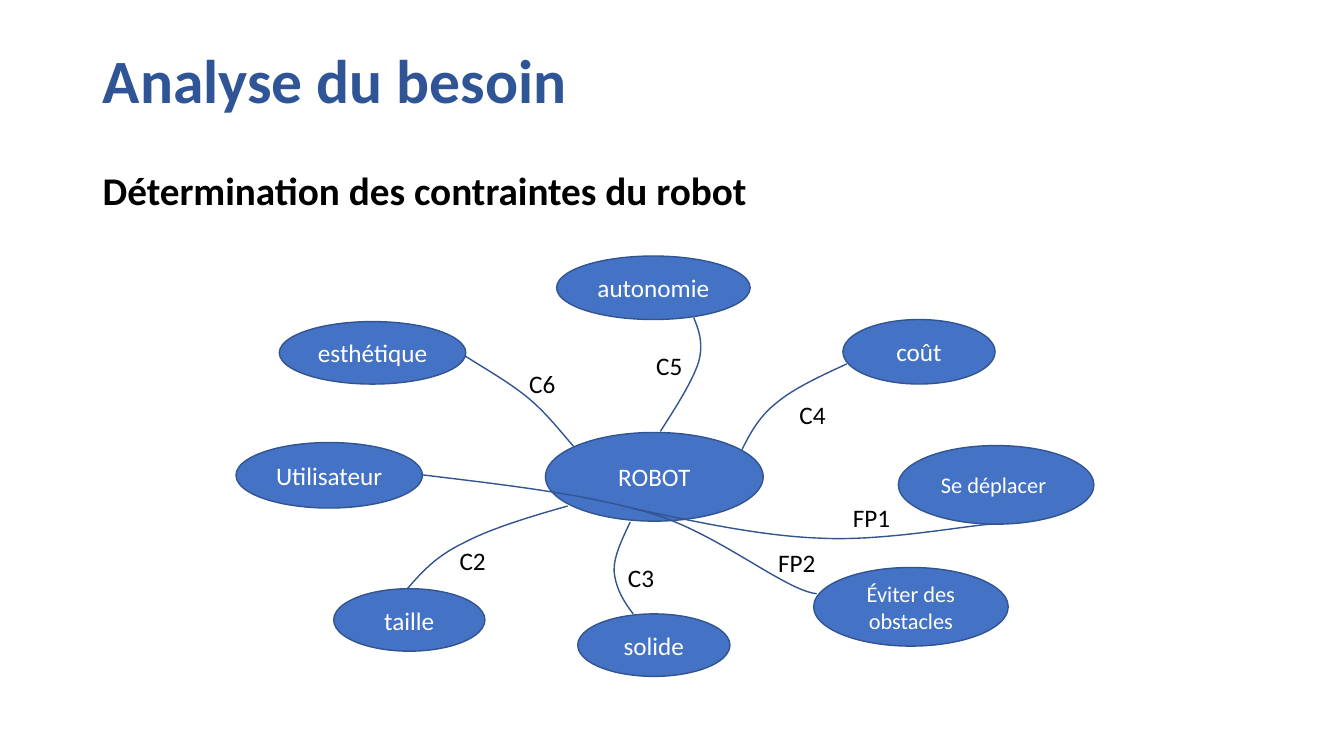
import pptx
import pptx.dml.color
import pptx.enum.shapes
import pptx.enum.text
import pptx.oxml.ns
import pptx.util
import lxml.etree
from dataclasses import dataclass


@dataclass(frozen=True)
class Theme:
    font: str = "Calibri"
    heading: str = "2F5597"
    text: str = "000000"
    bubble: str = "4472C4"
    outline: str = "325491"
    bubble_text: str = "FFFFFF"
    title_size: int = 44
    subtitle_size: int = 28
    label_size: int = 18
    small_size: int = 16
    line_width: int = 1
    line_spacing: float = 0.9
    columns: float = 13.33
    rows: float = 7.5


class NeedsDiagram:
    def __init__(self, presentation, theme):
        self.theme = theme
        self.cell = pptx.util.Inches(1)
        presentation.slide_width = self.grid(theme.columns)
        presentation.slide_height = self.grid(theme.rows)
        self.slide = presentation.slides.add_slide(presentation.slide_layouts[5])

    def grid(self, cells):
        return round(cells * self.cell)

    def box(self, *cells):
        return [self.grid(value) for value in cells]

    def color(self, value):
        return pptx.dml.color.RGBColor.from_string(value)

    def set_text(self, shape, text, size, color, bold=False):
        frame = shape.text_frame
        frame.word_wrap = True
        frame.text = text
        paragraph = frame.paragraphs[0]
        paragraph.alignment = pptx.enum.text.PP_ALIGN.LEFT
        paragraph.font.name = self.theme.font
        paragraph.font.size = pptx.util.Pt(size)
        paragraph.font.bold = bold
        paragraph.font.color.rgb = self.color(color)
        return paragraph

    def outline(self, shape):
        shape.shadow.inherit = False
        shape.line.color.rgb = self.color(self.theme.outline)
        shape.line.width = pptx.util.Pt(self.theme.line_width)

    def title(self, text, left, top, width, height):
        shape = self.slide.shapes.title
        shape.left, shape.top, shape.width, shape.height = self.box(left, top, width, height)
        paragraph = self.set_text(shape, text, self.theme.title_size, self.theme.heading, True)
        paragraph.line_spacing = self.theme.line_spacing
        shape.text_frame.auto_size = pptx.enum.text.MSO_AUTO_SIZE.NONE
        shape.text_frame.vertical_anchor = pptx.enum.text.MSO_ANCHOR.MIDDLE

    def subtitle(self, text, left, top, width, height):
        shape = self.slide.shapes.add_textbox(*self.box(left, top, width, height))
        paragraph = self.set_text(shape, text, self.theme.subtitle_size, self.theme.text, True)
        paragraph.line_spacing = self.theme.line_spacing

    def bubble(self, text, left, top, width, height, size):
        shape = self.slide.shapes.add_shape(
            pptx.enum.shapes.MSO_SHAPE.OVAL, *self.box(left, top, width, height))
        shape.fill.solid()
        shape.fill.fore_color.rgb = self.color(self.theme.bubble)
        self.outline(shape)
        shape.text_frame.vertical_anchor = pptx.enum.text.MSO_ANCHOR.MIDDLE
        paragraph = self.set_text(shape, text, size, self.theme.bubble_text)
        paragraph.alignment = pptx.enum.text.PP_ALIGN.CENTER

    def curve(self, start, *points):
        builder = self.slide.shapes.build_freeform(*self.box(*start))
        builder.add_line_segments([self.box(*point) for point in points], close=False)
        shape = builder.convert_to_shape()
        shape.fill.background()
        self.outline(shape)
        name = pptx.oxml.ns.qn
        segments = list(shape._element.iter(name("a:lnTo")))
        for first in range(0, len(segments), 3):
            bezier = lxml.etree.Element(name("a:cubicBezTo"))
            segments[first].addprevious(bezier)
            for segment in segments[first:first + 3]:
                bezier.append(segment[0])
                segment.getparent().remove(segment)

    def label(self, text, left, top, width, height=0.4):
        shape = self.slide.shapes.add_textbox(*self.box(left, top, width, height))
        self.set_text(shape, text, self.theme.label_size, self.theme.text)


def main():
    presentation = pptx.Presentation()
    theme = Theme()
    diagram = NeedsDiagram(presentation, theme)
    diagram.title("Analyse du besoin", 0.92, 0.4, 11.5, 0.86)
    diagram.subtitle("Détermination des contraintes du robot", 0.92, 1.65, 11.5, 0.6)

    normal, small = theme.label_size, theme.small_size
    bubbles = [
        ("esthétique", 2.77, 3.19, 1.85, 0.62, normal),
        ("ROBOT", 5.41, 4.29, 2.16, 0.88, normal),
        ("coût", 8.36, 3.17, 1.51, 0.64, normal),
        ("autonomie", 5.52, 2.54, 1.92, 0.63, normal),
        ("solide", 5.73, 6.09, 1.51, 0.62, normal),
        ("Se déplacer ", 8.91, 4.42, 1.94, 0.78, small),
        ("Utilisateur", 2.34, 4.39, 1.85, 0.65, normal),
        ("taille", 3.31, 5.84, 1.5, 0.62, normal),
        ("Éviter des obstacles", 8.07, 5.63, 1.93, 0.78, small),
    ]
    for bubble in bubbles:
        diagram.bubble(*bubble)

    curves = [
        [(4.18, 4.71), (5, 4.81), (5.82, 4.9), (6.48, 5.1),
         (7.13, 5.3), (7.79, 5.86), (8.1, 5.89)],
        [(6.26, 5.04), (6.91, 5.18), (7.56, 5.32), (8.15, 5.34),
         (8.75, 5.37), (9.55, 5.22), (9.83, 5.2)],
        [(6.25, 5.18), (6.17, 5.35), (6.09, 5.51), (6.09, 5.66),
         (6.1, 5.81), (6.17, 5.95), (6.28, 6.09)],
        [(5.63, 5.02), (5.24, 5.13), (4.85, 5.25), (4.59, 5.39),
         (4.32, 5.52), (4.18, 5.68), (4.04, 5.84)],
        [(5.69, 4.43), (5.55, 4.27), (5.42, 4.1), (5.24, 3.95),
         (5.06, 3.8), (4.83, 3.67), (4.61, 3.53)],
        [(6.55, 4.28), (6.71, 4.03), (6.87, 3.78), (6.93, 3.59),
         (6.98, 3.4), (6.93, 3.27), (6.88, 3.15)],
        [(7.36, 4.46), (7.44, 4.3), (7.53, 4.13), (7.71, 3.99),
         (7.88, 3.85), (8.14, 3.73), (8.4, 3.61)],
    ]
    for points in curves:
        diagram.curve(*points)

    labels = [
        ("C6", 5.15, 3.61, 0.48),
        ("C5", 6.41, 3.43, 0.5),
        ("C4", 7.83, 3.91, 0.48),
        ("FP1", 8.36, 4.93, 0.73),
        ("FP2", 7.62, 5.38, 0.8),
        ("C3", 6.13, 5.53, 0.55),
        ("C2", 4.46, 5.36, 0.64),
    ]
    for label in labels:
        diagram.label(*label)
    presentation.save("out.pptx")


if __name__ == "__main__":
    main()
